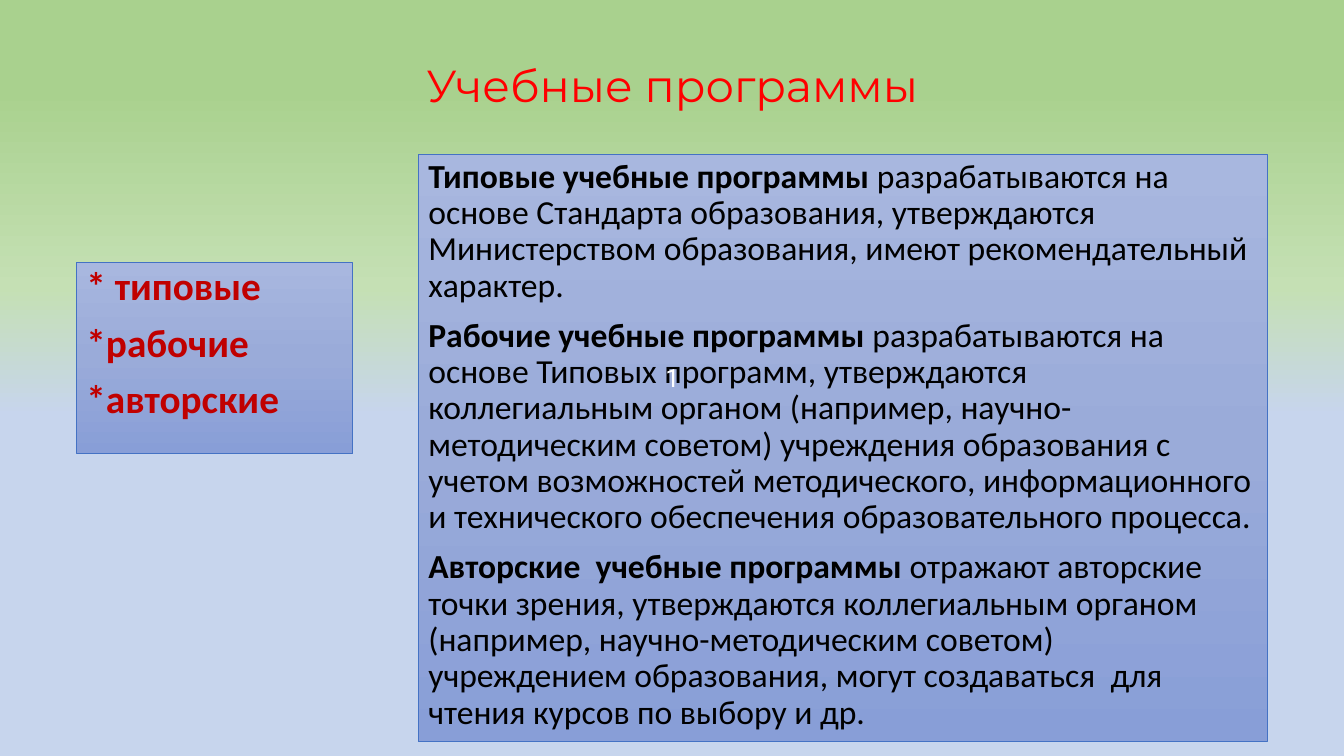
import pptx
import pptx.util
from pptx.dml.color import RGBColor
from pptx.enum.shapes import MSO_SHAPE
from pptx.enum.text import MSO_ANCHOR, PP_ALIGN
from pptx.oxml import parse_xml
from pptx.oxml.ns import nsdecls, qn
from pptx.util import Inches

COLORS = {
    "title": "FF0000",
    "kinds": "C00000",
    "body": "000000",
    "number": "FFFFFF",
    "border": "4472C4",
}
PAGE_STOPS = [(0, "A9D18E"), (12, "A9D18E"), (38, "C5E0B4"), (55, "C7D5ED")]
PANEL_STOPS = [(0, "A8B7DF"), (50, "9AABD9"), (100, "889ED7")]

KINDS = ["* типовые", "*рабочие", "*авторские"]
PROGRAMS = [
    ("Типовые учебные программы ",
     "разрабатываются на основе Стандарта образования, утверждаются "
     "Министерством образования, имеют рекомендательный характер."),
    ("Рабочие учебные программы ",
     "разрабатываются на основе Типовых программ, утверждаются коллегиальным "
     "органом (например, научно-методическим советом) учреждения образования "
     "с учетом возможностей методического, информационного и технического "
     "обеспечения образовательного процесса."),
    ("Авторские  учебные программы ",
     "отражают авторские точки зрения, утверждаются коллегиальным органом "
     "(например, научно-методическим советом) учреждением образования, могут "
     "создаваться  для чтения курсов по выбору и др."),
]


def set_gradient(fill, owner, stops):
    """Fill from top to bottom with (percent, colour) stops."""
    fill.gradient()
    fill.gradient_angle = 270
    stop_list = next(owner.iter(qn("a:gsLst")))
    for stop in list(stop_list):
        stop_list.remove(stop)
    for percent, color in stops:
        stop_list.append(parse_xml(
            f'<a:gs {nsdecls("a")} pos="{percent * 1000}">'
            f'<a:srgbClr val="{color}"/></a:gs>'))


def write(frame, paragraphs, *, size, color, font="Calibri", bold_first=False,
          align=PP_ALIGN.LEFT, spacing=None, before=0):
    """Write paragraphs, each a sequence of spans; the first span may be bold."""
    for index, spans in enumerate(paragraphs):
        para = frame.add_paragraph() if index else frame.paragraphs[0]
        para.alignment = align
        para.line_spacing = spacing
        para.space_before = pptx.util.Pt(before)
        for position, text in enumerate(spans):
            span = para.add_run()
            span.text = text
            span.font.name = font
            span.font.size = pptx.util.Pt(size)
            span.font.bold = bold_first and position == 0
            span.font.color.rgb = RGBColor.from_string(COLORS[color])


def add_title(page, text):
    title = page.shapes.title
    title.left, title.top = Inches(0.92), Inches(0.39)
    title.width, title.height = Inches(11.5), Inches(0.96)
    title.text_frame.vertical_anchor = MSO_ANCHOR.MIDDLE
    write(title.text_frame, [[text]], size=32, color="title",
          font="Montserrat", align=PP_ALIGN.CENTER, spacing=0.9)


def add_panel(page, left, top, width, height, paragraphs, **text_format):
    panel = page.shapes.add_shape(
        MSO_SHAPE.RECTANGLE, Inches(left), Inches(top), Inches(width), Inches(height))
    panel.shadow.inherit = False
    set_gradient(panel.fill, panel.element, PANEL_STOPS)
    panel.line.color.rgb = RGBColor.from_string(COLORS["border"])
    panel.line.width = pptx.util.Pt(0.5)
    panel.text_frame.word_wrap = True
    panel.text_frame.vertical_anchor = MSO_ANCHOR.TOP
    write(panel.text_frame, paragraphs, bold_first=True, spacing=0.9,
          before=10, **text_format)


def add_number(page, text):
    box = page.shapes.add_textbox(Inches(6.5), Inches(3.55), Inches(0.34), Inches(0.4))
    box.text_frame.word_wrap = False
    write(box.text_frame, [[text]], size=18, color="number", font="Roboto")


def main():
    deck = pptx.Presentation()
    deck.slide_width, deck.slide_height = Inches(13.33), Inches(7.5)
    page = deck.slides.add_slide(deck.slide_layouts.get_by_name("Title Only"))
    set_gradient(page.background.fill, page.element, PAGE_STOPS)
    add_title(page, "Учебные программы")
    add_panel(page, 0.76, 2.6, 2.74, 1.9, [[kind] for kind in KINDS],
              size=28, color="kinds")
    add_panel(page, 4.15, 1.53, 8.42, 5.83, PROGRAMS, size=24, color="body")
    add_number(page, "1")
    deck.save("out.pptx")


if __name__ == "__main__":
    main()
